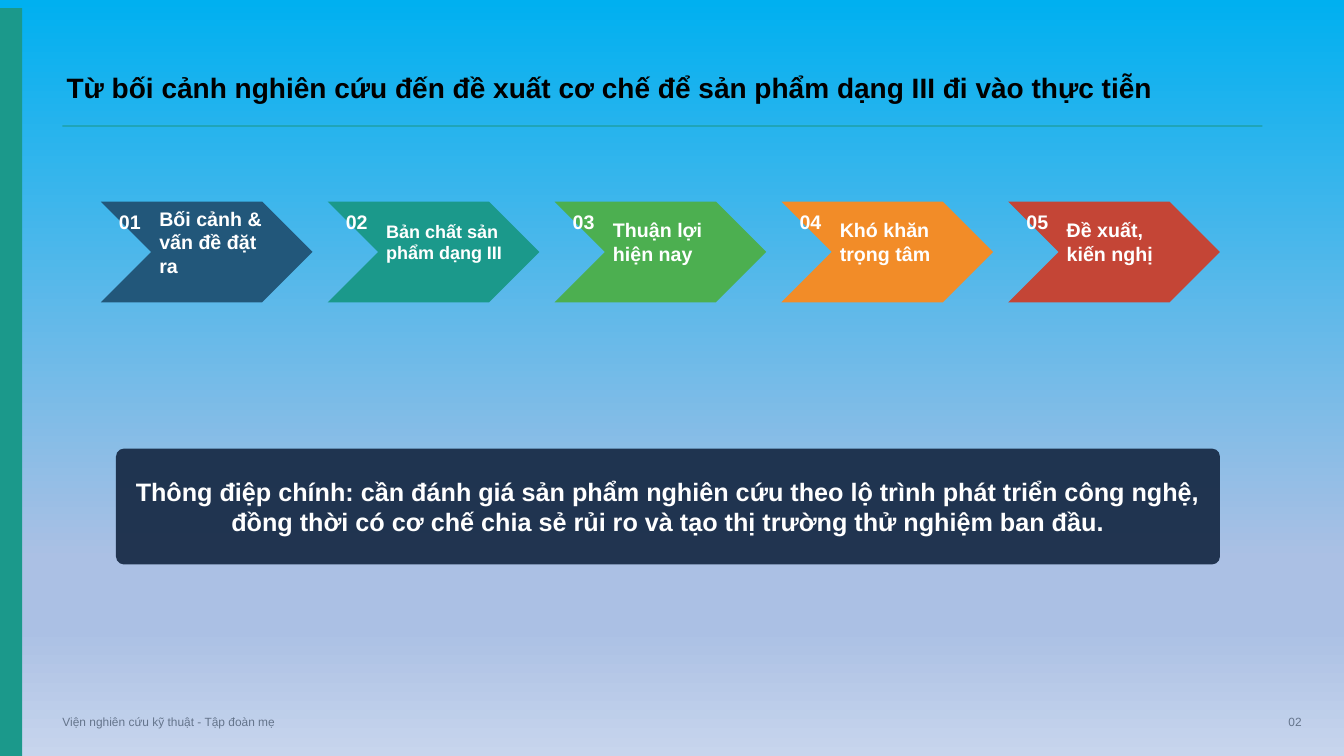
from lxml import etree
from pptx import Presentation
from pptx import util as u
from pptx.dml.color import RGBColor
from pptx.enum import shapes, text
from pptx.oxml.ns import qn

PX = 9144  # 100 px to the inch
W, H = 1333, 750
COLORS = {
    "teal": "1B998B", "blue": "22577A", "green": "4CAF50", "orange": "F28C28",
    "red": "C44536", "navy": "172A45", "gray": "64748B", "white": "FFFFFF",
    "black": "000000",
}
SKY = [(0, "00B0F0"), (74, "ABC0E4"), (83, "ABC0E4"), (100, "C7D5ED")]
STEPS = [
    ("Bối cảnh & vấn đề đặt ra", "blue", 14),
    ("Bản chất sản phẩm dạng III", "teal", 12.9),
    ("Thuận lợi hiện nay", "green", 14),
    ("Khó khăn trọng tâm", "orange", 14),
    ("Đề xuất, kiến nghị", "red", 14),
]
SHAPE, ALIGN = shapes.MSO_SHAPE, text.PP_ALIGN


def emu(*lengths):
    return [u.Emu(n * PX) for n in lengths]


def rgb(name):
    return RGBColor.from_string(COLORS[name])


def set_alpha(sp, percent):
    color = sp._element.spPr.find(".//" + qn("a:srgbClr"))
    etree.SubElement(color, qn("a:alpha"), val=str(percent * 1000))


def write(sp, words, size, color, bold=True, align=ALIGN.LEFT):
    tf = sp.text_frame
    frame = dict(word_wrap=True, auto_size=text.MSO_AUTO_SIZE.NONE,
                 vertical_anchor=text.MSO_ANCHOR.MIDDLE, margin_left=0,
                 margin_top=0, margin_right=0, margin_bottom=0)
    for key, value in frame.items():
        setattr(tf, key, value)
    p = tf.paragraphs[0]
    p.alignment = align
    r = p.add_run()
    r.text = words
    for key, value in dict(name="Arial", size=u.Pt(size), bold=bold).items():
        setattr(r.font, key, value)
    r.font.color.rgb = rgb(color)


def add_text(s, box, *args, **kwargs):
    write(s.shapes.add_textbox(*emu(*box)), *args, **kwargs)


def add_block(s, kind, box, color):
    sp = s.shapes.add_shape(kind, *emu(*box))
    sp.shadow.inherit = False
    sp.fill.solid()
    sp.fill.fore_color.rgb = rgb(color)
    sp.line.fill.background()
    return sp


def paint_background(s):
    fill = s.background.fill
    fill.gradient()
    fill.gradient_angle = 270
    stops = s._element.find(".//" + qn("a:gsLst"))
    for stop in list(stops):
        stops.remove(stop)
    for percent, color in SKY:
        stop = etree.SubElement(stops, qn("a:gs"), pos=str(percent * 1000))
        etree.SubElement(stop, qn("a:srgbClr"), val=color)


def add_header(s, x, y, w):
    title = s.shapes.title
    title.left, title.top, title.width, title.height = emu(x + 4, y, 1159, 73)
    write(title, "Từ bối cảnh nghiên cứu đến đề xuất cơ chế để sản phẩm "
          "dạng III đi vào thực tiễn", 20, "black")
    rule = s.shapes.add_connector(shapes.MSO_CONNECTOR.STRAIGHT,
                                  *emu(x, y + 75, x + w, y + 75))
    rule.line.color.rgb = rgb("teal")
    rule.line.width = u.Pt(1)
    set_alpha(rule, 80)
    etree.SubElement(rule._element.spPr, qn("a:effectLst"))


def add_steps(s, x, y, w, h, pitch):
    for i, (label, color, size) in enumerate(STEPS):
        left = x + i * pitch
        add_block(s, SHAPE.CHEVRON, (left, y, w, h), color)
        add_text(s, (left + 18, y + 10, 38, 20), f"{i + 1:02}", 14, "white")
        add_text(s, (left + 58, y + 18, 120, 44), label, size, "white")


def add_message(s, x, y, w, h):
    panel = add_block(s, SHAPE.ROUNDED_RECTANGLE, (x, y, w, h), "navy")
    panel.adjustments[0] = 0.07
    set_alpha(panel, 93)
    add_text(s, (x + 16, y + 12, w - 32, h - 24),
             "Thông điệp chính: cần đánh giá sản phẩm nghiên cứu theo lộ trình "
             "phát triển công nghệ, đồng thời có cơ chế chia sẻ rủi ro và tạo "
             "thị trường thử nghiệm ban đầu.", 18, "white", align=ALIGN.CENTER)


def add_footer(s, x, y, w, h):
    add_text(s, (x, y, 470, h), "Viện nghiên cứu kỹ thuật - Tập đoàn mẹ",
             8.5, "gray", bold=False)
    add_text(s, (x + w - 48, y, 48, h), "02", 8.5, "gray", bold=False,
             align=ALIGN.RIGHT)


def main():
    prs = Presentation()
    prs.slide_width, prs.slide_height = emu(W, H)
    s = prs.slides.add_slide(prs.slide_layouts[5])
    paint_background(s)
    add_block(s, SHAPE.RECTANGLE, (0, 8, 22, H - 8), "teal")
    add_header(s, 62, 50, 1190)
    add_steps(s, 100, 200, 210, 100, pitch=225)
    add_message(s, 115, 445, 1095, 115)
    add_footer(s, 62, 705, 1229, 22)
    prs.save("out.pptx")


if __name__ == "__main__":
    main()
